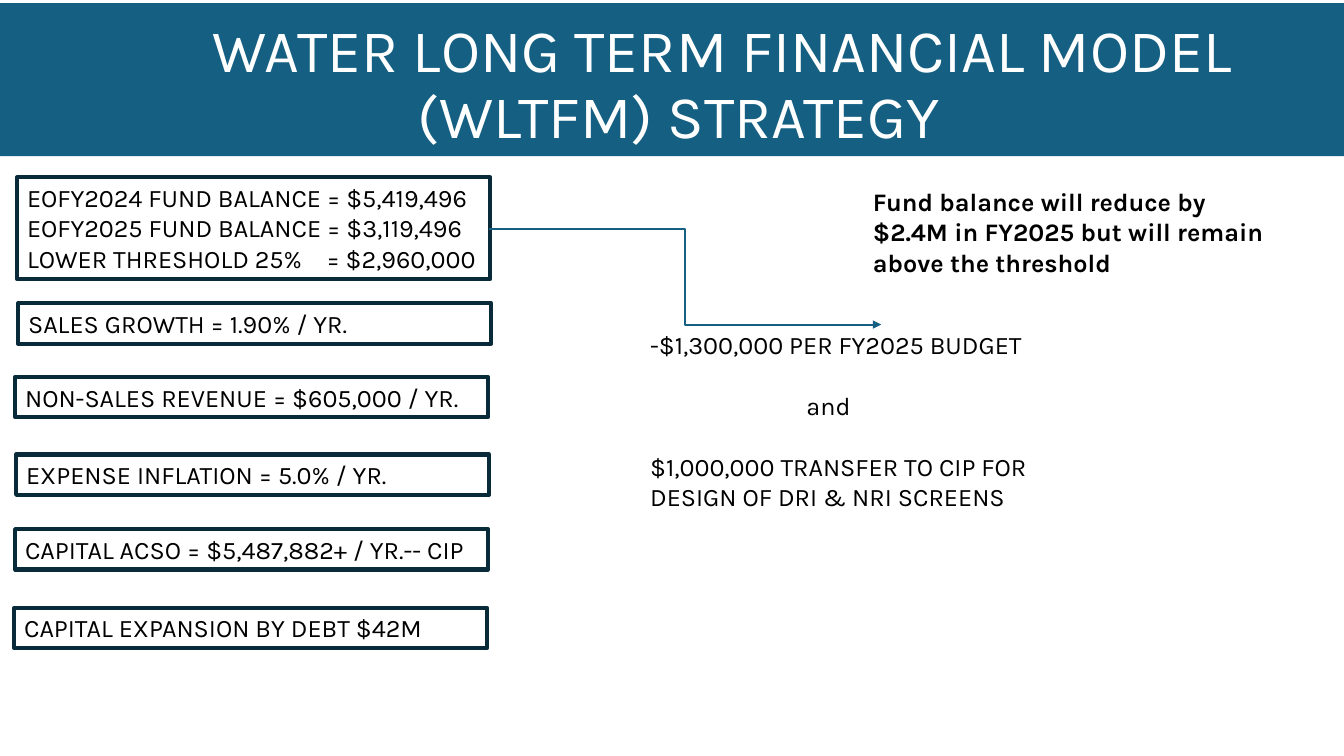
"""Build the water long term financial model strategy slide."""
from lxml import etree
from pptx import Presentation
from pptx.dml.color import RGBColor
from pptx.enum import shapes, text
from pptx.oxml import ns
from pptx.util import Inches, Pt

THEME = {
    "font": "Karla", "title_size": 43.2, "body_size": 18,
    "band": "156082", "frame": "092A39", "ink": "000000", "paper": "FFFFFF",
}
SLIDE_SIZE = (13.33, 7.5)
BLANK_LINE = 21.7
TITLE = [
    ("WATER LONG TERM FINANCIAL MODEL", {"indent": 1.0}),
    ("(WLTFM) STRATEGY", {"indent": 0.14}),
]
ASSUMPTIONS = [
    (0.17, 1.76, 1.01, [
        ("EOFY2024 FUND BALANCE = $5,419,496", {}),
        ("EOFY2025 FUND BALANCE = $3,119,496", {}),
        ("LOWER THRESHOLD 25%\t= $2,960,000", {"tab": 2.97}),
    ]),
    (0.18, 3.01, 0.4, [("SALES GROWTH = 1.90% / YR.", {})]),
    (0.15, 3.74, 0.4, [("NON-SALES REVENUE = $605,000 / YR.", {})]),
    (0.16, 4.51, 0.4, [("EXPENSE INFLATION = 5.0% / YR.", {})]),
    (0.15, 5.25, 0.4, [("CAPITAL ACSO = $5,487,882+ / YR.-- CIP", {})]),
    (0.14, 6.03, 0.4, [("CAPITAL EXPANSION BY DEBT $42M", {})]),
]
FRAME_WIDTH = 4.69
NOTES = [
    ((6.35, 3.22, 4.81, 2.22), False, [
        ("-$1,300,000 PER FY2025 BUDGET", {}),
        ("and", {"indent": 1.55, "before": BLANK_LINE}),
        ("$1,000,000 TRANSFER TO CIP FOR DESIGN OF DRI & NRI SCREENS",
         {"before": BLANK_LINE}),
    ]),
    ((8.56, 1.8, 4.2, 1.01), True, [
        ("Fund balance will reduce by $2.4M in FY2025 but will remain "
         "above the threshold", {}),
    ]),
]
ARROW = (4.85, 2.27, 8.74, 3.22)


def color(name):
    return RGBColor.from_string(THEME[name])


def add_xml(parent, tag, **values):
    return etree.SubElement(parent, ns.qn(tag), values)


def write(box, lines, size="body_size", ink="ink", bold=False,
          align=text.PP_ALIGN.LEFT, anchor=text.MSO_ANCHOR.TOP, spacing=1.0):
    frame = box.text_frame
    frame.word_wrap = True
    frame.vertical_anchor = anchor
    for number, (words, layout) in enumerate(lines):
        para = frame.add_paragraph() if number else frame.paragraphs[0]
        formats = {"alignment": align, "line_spacing": spacing,
                   "space_before": Pt(layout.get("before", 0))}
        for key, value in formats.items():
            setattr(para, key, value)
        props = para._p.get_or_add_pPr()
        if "indent" in layout:
            props.set("marL", str(Inches(layout["indent"])))
        if "tab" in layout:
            stops = add_xml(props, "a:tabLst")
            add_xml(stops, "a:tab", pos=str(Inches(layout["tab"])), algn="l")
        span = para.add_run()
        span.text = words
        fonts = {"name": THEME["font"], "size": Pt(THEME[size]), "bold": bold}
        for key, value in fonts.items():
            setattr(span.font, key, value)
        span.font.color.rgb = color(ink)


def add_box(page, place, fill=None, line=None):
    box = page.shapes.add_shape(shapes.MSO_SHAPE.RECTANGLE, *map(Inches, place))
    box.shadow.inherit = False
    if fill:
        box.fill.solid()
        box.fill.fore_color.rgb = color(fill)
    else:
        box.fill.background()
    if line:
        box.line.color.rgb = color(line)
        box.line.width = Pt(3)
    else:
        box.line.fill.background()
    return box


def add_arrow(page):
    arrow = page.shapes.add_connector(
        shapes.MSO_CONNECTOR.ELBOW, *map(Inches, ARROW))
    arrow.line.color.rgb = color("band")
    arrow.line.width = Pt(1.5)
    add_xml(arrow.line._get_or_add_ln(), "a:tailEnd", type="triangle")
    add_xml(arrow._element.spPr, "a:effectLst")


def main():
    deck = Presentation()
    deck.slide_width, deck.slide_height = map(Inches, SLIDE_SIZE)
    page = deck.slides.add_slide(deck.slide_layouts[6])
    band = add_box(page, (0, 0.03, SLIDE_SIZE[0], 1.52), fill="band")
    write(band, TITLE, "title_size", "paper", align=text.PP_ALIGN.CENTER,
          anchor=text.MSO_ANCHOR.BOTTOM, spacing=0.9)
    for left, top, height, lines in ASSUMPTIONS:
        write(add_box(page, (left, top, FRAME_WIDTH, height), line="frame"), lines)
    add_arrow(page)
    for place, bold, lines in NOTES:
        write(page.shapes.add_textbox(*map(Inches, place)), lines, bold=bold)
    deck.save("out.pptx")


if __name__ == "__main__":
    main()
